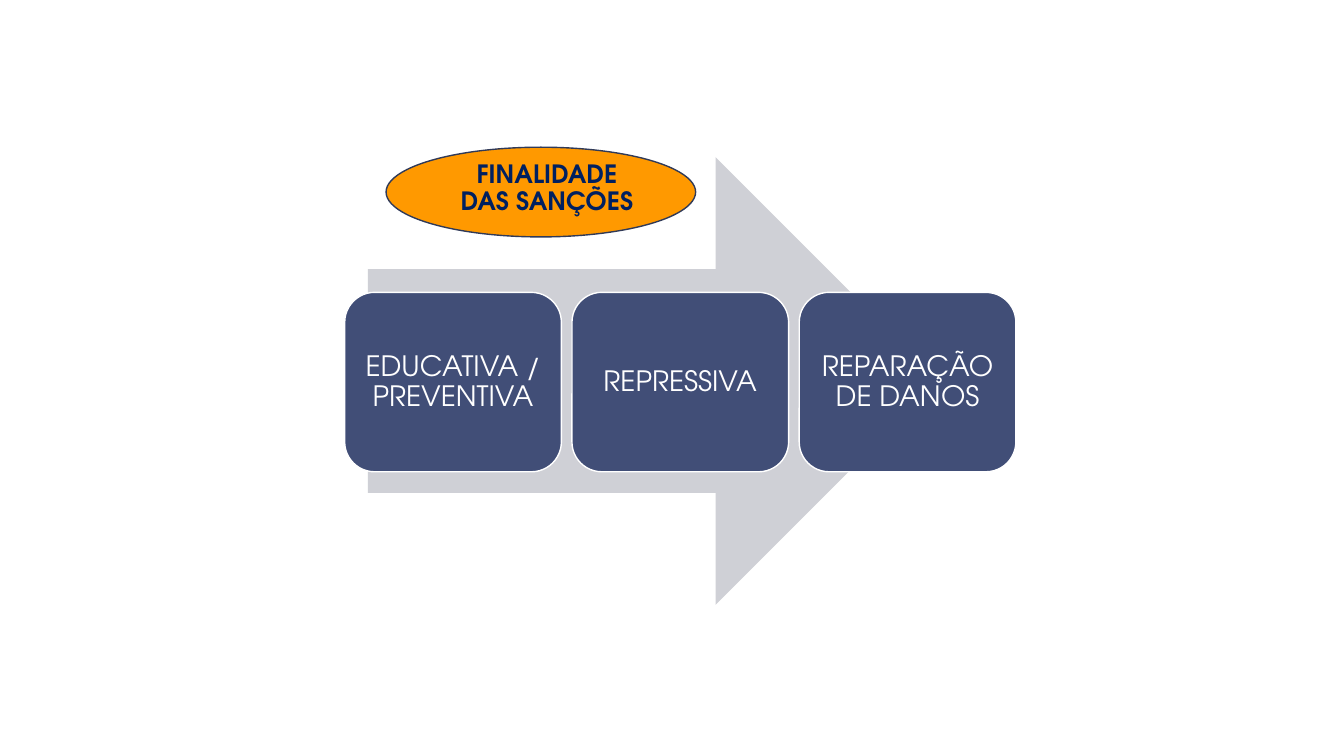
from dataclasses import dataclass

from pptx import Presentation
from pptx.dml.color import RGBColor
from pptx.enum.shapes import MSO_SHAPE
from pptx.enum.text import MSO_ANCHOR, MSO_AUTO_SIZE, PP_ALIGN
from pptx.shapes.autoshape import Shape
from pptx.slide import Slide
from pptx.util import Inches, Pt

ARROW, CARD, OVAL = MSO_SHAPE.RIGHT_ARROW, MSO_SHAPE.ROUNDED_RECTANGLE, MSO_SHAPE.OVAL
TOP, MIDDLE = MSO_ANCHOR.TOP, MSO_ANCHOR.MIDDLE
CENTER = PP_ALIGN.CENTER
FIXED_SIZE = MSO_AUTO_SIZE.NONE

SLIDE_WIDTH, SLIDE_HEIGHT = Inches(13.33), Inches(7.5)
FONT = "TeX Gyre Adventor"
WHITE, NAVY, ORANGE = "FFFFFF", "002060", "FF9900"
CARD_BLUE, ARROW_GRAY, OVAL_EDGE = "414E77", "CFD0D6", "303A58"


@dataclass(frozen=True)
class Area:
    """Position and size in percent of the slide."""
    left: float
    top: float
    width: float
    height: float

    def emu(self) -> tuple[int, int, int, int]:
        return (round(SLIDE_WIDTH * self.left / 100),
                round(SLIDE_HEIGHT * self.top / 100),
                round(SLIDE_WIDTH * self.width / 100),
                round(SLIDE_HEIGHT * self.height / 100))


@dataclass(frozen=True)
class TextStyle:
    size: float
    color: str
    bold: bool
    anchor: MSO_ANCHOR
    side_inset: float
    top_inset: float


ARROW_AREA = Area(27.38, 20.8, 42.52, 59.2)
OVAL_AREA = Area(28.73, 19.47, 23.03, 11.87)
TITLE_AREA = Area(32.7, 20.67, 15.98, 8.67)
FIRST_CARD = Area(25.65, 38.67, 16.12, 23.73)
CARD_GAP = 0.79

CARD_STYLE = TextStyle(20, WHITE, False, MIDDLE, 0.08, 0.08)
TITLE_STYLE = TextStyle(18, NAVY, True, TOP, 0.1, 0.05)
PURPOSES = ("EDUCATIVA / PREVENTIVA", "REPRESSIVA", "REPARAÇÃO DE DANOS")


def rgb(color: str) -> RGBColor:
    return RGBColor.from_string(color)


def draw_shape(slide: Slide, kind: MSO_SHAPE, area: Area, fill: str,
               edge: str | None = None) -> Shape:
    shape = slide.shapes.add_shape(kind, *area.emu())
    shape.shadow.inherit = False
    shape.fill.solid()
    shape.fill.fore_color.rgb = rgb(fill)
    if edge:
        shape.line.color.rgb = rgb(edge)
        shape.line.width = Pt(1)
    else:
        shape.line.fill.background()
    return shape


def write_text(shape: Shape, text: str, style: TextStyle) -> None:
    frame = shape.text_frame
    frame.text = text
    frame.word_wrap = True
    frame.auto_size = FIXED_SIZE
    frame.vertical_anchor = style.anchor
    frame.margin_left = frame.margin_right = Inches(style.side_inset)
    frame.margin_top = frame.margin_bottom = Inches(style.top_inset)
    paragraph = frame.paragraphs[0]
    paragraph.alignment = CENTER
    paragraph.line_spacing = 0.9
    font = paragraph.runs[0].font
    font.name, font.size, font.bold = FONT, Pt(style.size), style.bold
    font.color.rgb = rgb(style.color)


def main() -> None:
    deck = Presentation()
    deck.slide_width, deck.slide_height = SLIDE_WIDTH, SLIDE_HEIGHT
    slide = deck.slides.add_slide(deck.slide_layouts[5])

    # Arrow behind the cards
    draw_shape(slide, ARROW, ARROW_AREA, ARROW_GRAY)

    # One card per purpose of the sanctions
    for column, purpose in enumerate(PURPOSES):
        left = FIRST_CARD.left + column * (FIRST_CARD.width + CARD_GAP)
        area = Area(left, FIRST_CARD.top, FIRST_CARD.width, FIRST_CARD.height)
        card = draw_shape(slide, CARD, area, CARD_BLUE, WHITE)
        write_text(card, purpose, CARD_STYLE)

    # Title, brought in front of its oval
    draw_shape(slide, OVAL, OVAL_AREA, ORANGE, OVAL_EDGE)
    title = slide.shapes.title
    title.left, title.top, title.width, title.height = TITLE_AREA.emu()
    write_text(title, "FINALIDADE DAS SANÇÕES", TITLE_STYLE)
    slide.shapes.element.append(title.element)

    deck.save("out.pptx")


if __name__ == "__main__":
    main()
